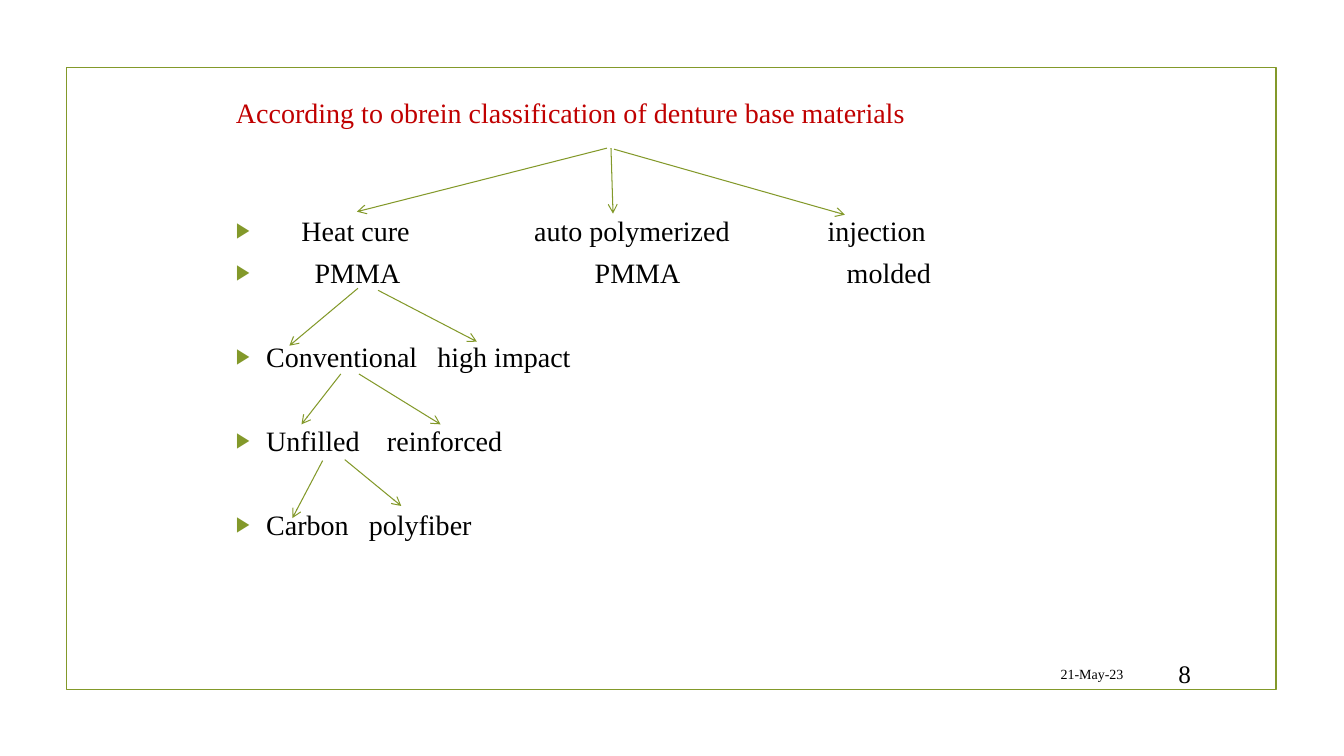
"""Build a slide with a classification tree of denture base materials."""
from dataclasses import dataclass

from lxml.etree import SubElement as Sub
from pptx import Presentation
from pptx.dml.color import RGBColor as Rgb
from pptx.enum.shapes import MSO_CONNECTOR as Conn, MSO_SHAPE as Kind
from pptx.enum.text import MSO_ANCHOR as Anchor, MSO_AUTO_SIZE as Fit, PP_ALIGN as Align
from pptx.oxml.ns import qn
from pptx.util import Inches, Pt

HUES = {"green": "83992A", "red": "C00000", "black": "000000"}
FACE = "Times New Roman"
LEFT, TOP, WIDTH = 2.24, 0.9, 7.59
LIST_TOP, PITCH = 2.07, 30
PAD_X, PAD_Y = 0.1, 0.05


@dataclass
class Node:
    """A word in the tree, x inches from the left edge of the list text."""
    text: str
    x: float


@dataclass
class Row:
    """A line of the tree: its step down, bulleted head and further nodes."""
    step: int
    head: Node
    rest: list[Node]


@dataclass
class Arrow:
    """An arrow between two points."""
    start: tuple[float, float]
    end: tuple[float, float]


@dataclass
class Note:
    """A small footer text."""
    text: str
    left: float
    width: float
    size: int


ROWS = [
    Row(0, Node("Heat cure", 0.65), [Node("auto polymerized", 2.96), Node("injection", 5.87)]),
    Row(1, Node("PMMA", 0.78), [Node("PMMA", 3.56), Node("molded", 6.06)]),
    Row(3, Node("Conventional", 0.3), [Node("high impact", 2.0)]),
    Row(5, Node("Unfilled", 0.3), [Node("reinforced", 1.5)]),
    Row(7, Node("Carbon", 0.3), [Node("polyfiber", 1.32)]),
]
ARROWS = [
    Arrow((6.02, 1.47), (3.54, 2.1)),
    Arrow((6.06, 1.47), (6.08, 2.12)),
    Arrow((6.09, 1.48), (8.38, 2.13)),
    Arrow((3.55, 2.86), (2.87, 3.43)),
    Arrow((3.75, 2.88), (4.73, 3.39)),
    Arrow((3.38, 3.71), (2.99, 4.21)),
    Arrow((3.56, 3.71), (4.37, 4.21)),
    Arrow((3.2, 4.57), (2.9, 5.14)),
    Arrow((3.42, 4.56), (3.98, 5.02)),
]
NOTES = [Note("8", 11.32, 0.59, 18), Note("21-May-23", 9.49, 1.75, 10)]


def apply(item, form: dict) -> None:
    """Set each attribute in form on item."""
    for name, value in form.items():
        setattr(item, name, value)


def place(shape, left: float, top: float, width: float, height: float) -> None:
    """Move and size a shape in inches, and format its text frame."""
    apply(shape, {"left": Inches(left), "top": Inches(top),
                  "width": Inches(width), "height": Inches(height)})
    apply(shape.text_frame, {
        "word_wrap": True, "auto_size": Fit.NONE, "vertical_anchor": Anchor.TOP,
        "margin_left": Inches(PAD_X), "margin_right": Inches(PAD_X),
        "margin_top": Inches(PAD_Y), "margin_bottom": Inches(PAD_Y)})


def write(para, text: str, hue: str = "black", size: int = 20, gap: int = 0,
          align=Align.LEFT) -> None:
    """Fill a paragraph with one formatted run."""
    apply(para, {"alignment": align, "space_before": Pt(gap), "space_after": Pt(0),
                 "line_spacing": Pt(size * 1.2)})
    run = para.add_run()
    run.text = text
    apply(run.font, {"name": FACE, "size": Pt(size), "bold": False})
    run.font.color.rgb = Rgb.from_string(HUES[hue])


def mark(para, indent: float) -> None:
    """Give a paragraph a green triangle bullet and a hanging indent."""
    props = para._p.get_or_add_pPr()
    props.set("marL", str(Inches(indent)))
    props.set("indent", str(-Inches(indent)))
    Sub(Sub(props, qn("a:buClr")), qn("a:srgbClr"), val=HUES["green"])
    Sub(props, qn("a:buSzPct"), val="76000")
    Sub(props, qn("a:buChar"), char="▶")


def draw_frame(slide) -> None:
    """Draw the green border."""
    frame = slide.shapes.add_shape(
        Kind.RECTANGLE, Inches(0.66), Inches(0.67), Inches(12), Inches(6.17))
    frame.shadow.inherit = False
    frame.fill.background()
    frame.line.color.rgb = Rgb.from_string(HUES["green"])
    frame.line.width = Pt(1.25)
    slide.shapes._spTree.insert(2, frame._element)


def draw_tree(slide, rows: list[Row]) -> None:
    """Fill the list with row heads and set the other nodes beside them."""
    body = slide.placeholders[1]
    place(body, LEFT, LIST_TOP, WIDTH, 3.73)
    last = -1
    for row in rows:
        first = row is rows[0]
        para = body.text_frame.paragraphs[0] if first else body.text_frame.add_paragraph()
        gap = 0 if first else (row.step - last) * PITCH - 24
        write(para, row.head.text, gap=gap)
        mark(para, row.head.x)
        last = row.step
        for node in row.rest:
            box = slide.shapes.add_textbox(0, 0, 0, 0)
            place(box, LEFT + node.x, LIST_TOP + row.step * PITCH / 72, 2.2, 0.43)
            write(box.text_frame.paragraphs[0], node.text)


def draw_note(slide, note: Note) -> None:
    """Draw a footer text, flush right."""
    box = slide.shapes.add_textbox(0, 0, 0, 0)
    place(box, note.left, 6.53, note.width, 0.31)
    box.text_frame.vertical_anchor = Anchor.MIDDLE
    write(box.text_frame.paragraphs[0], note.text, size=note.size, align=Align.RIGHT)


def draw_arrow(slide, arrow: Arrow) -> None:
    """Draw a thin green arrow."""
    ends = [Inches(n) for n in (*arrow.start, *arrow.end)]
    line = slide.shapes.add_connector(Conn.STRAIGHT, *ends)
    line.line.color.rgb = Rgb.from_string(HUES["green"])
    line.line.width = Pt(0.75)
    Sub(line.line._get_or_add_ln(), qn("a:tailEnd"), type="arrow")
    Sub(line._element.spPr, qn("a:effectLst"))


def main() -> None:
    """Build and save the slide."""
    deck = Presentation()
    apply(deck, {"slide_width": Inches(13.33), "slide_height": Inches(7.5)})
    slide = deck.slides.add_slide(deck.slide_layouts[1])
    draw_frame(slide)
    title = slide.shapes.title
    place(title, LEFT, TOP, WIDTH, 0.45)
    write(title.text_frame.paragraphs[0],
          "According to obrein classification of denture base materials", "red")
    draw_tree(slide, ROWS)
    for note in NOTES:
        draw_note(slide, note)
    for arrow in ARROWS:
        draw_arrow(slide, arrow)
    deck.save("out.pptx")


if __name__ == "__main__":
    main()
